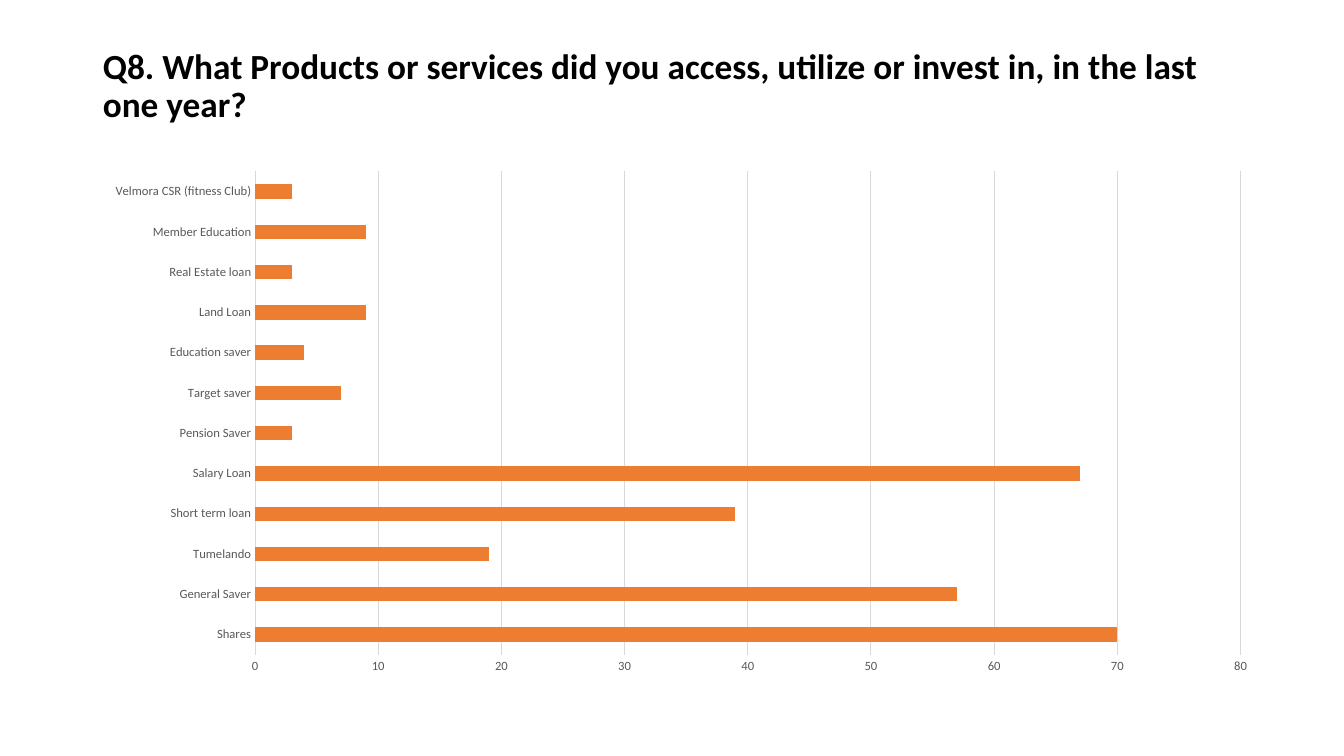
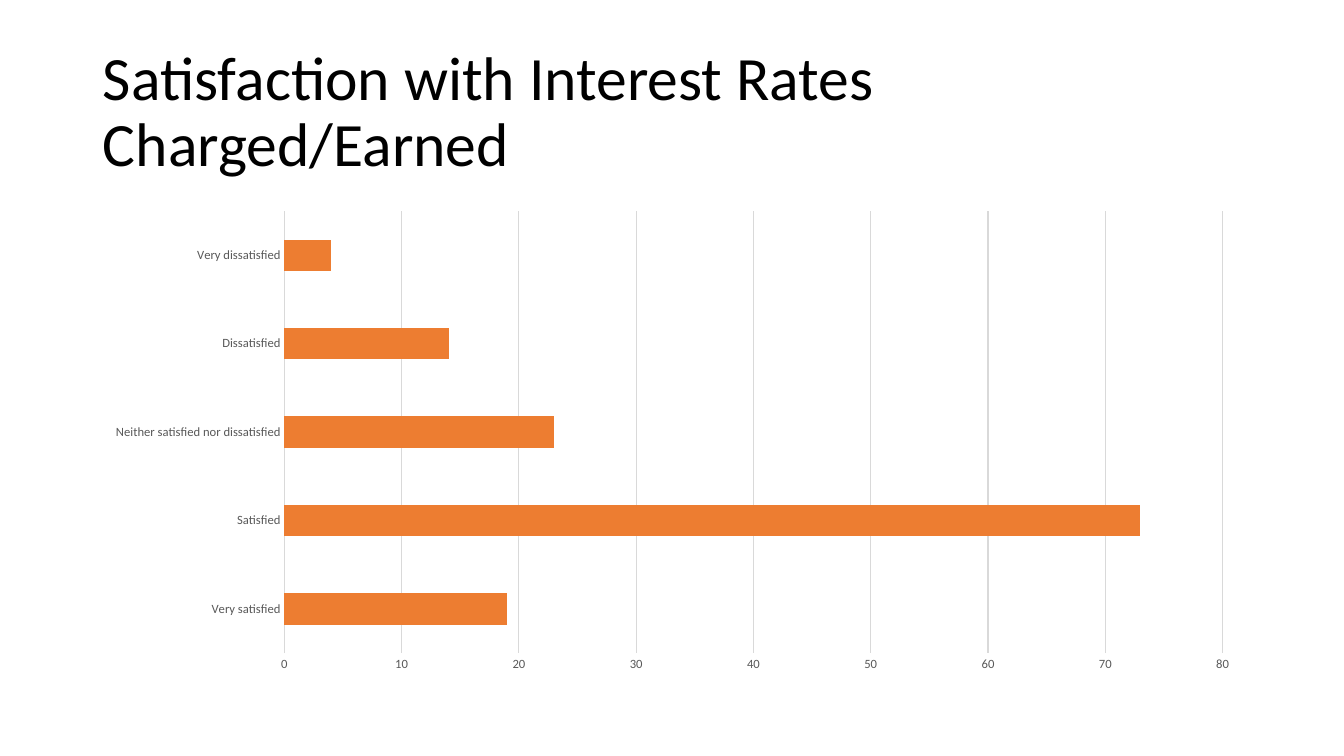
from dataclasses import dataclass
from typing import Any, Optional

from lxml.etree import SubElement
from pptx import Presentation
from pptx.chart.chart import Chart
from pptx.chart.data import CategoryChartData
from pptx.dml.color import RGBColor
from pptx.enum.chart import XL_CHART_TYPE, XL_TICK_MARK
from pptx.enum.text import MSO_ANCHOR, MSO_AUTO_SIZE, PP_ALIGN
from pptx.oxml.ns import qn
from pptx.slide import Slide
from pptx.util import Inches, Pt


@dataclass(frozen=True)
class Theme:
    font: str = "Calibri"
    title: RGBColor = RGBColor(0x00, 0x00, 0x00)
    label: RGBColor = RGBColor(0x59, 0x59, 0x59)
    rule: RGBColor = RGBColor(0xD9, 0xD9, 0xD9)
    bar: RGBColor = RGBColor(0xED, 0x7D, 0x31)
    question_size: float = 25.2
    title_size: float = 44
    label_size: float = 9
    rule_width: float = 0.75


@dataclass(frozen=True)
class SurveySlide:
    title: str
    title_size: float
    bold: bool
    title_height: float
    chart_top: float
    answers: dict[str, int]
    plot: Optional[tuple[float, float, float, float]] = None


THEME = Theme()
LEFT, WIDTH, TITLE_TOP, CHART_BOTTOM = 0.92, 11.5, 0.4, 6.76

SLIDES = [
    SurveySlide(
        "Q8. What Products or services did you access, utilize or invest in, "
        "in the last one year?",
        THEME.question_size, True, 0.92, 1.49,
        {"Shares": 70, "General Saver": 57, "Tumelando": 19,
         "Short term loan": 39, "Salary Loan": 67, "Pension Saver": 3,
         "Target saver": 7, "Education saver": 4, "Land Loan": 9,
         "Real Estate loan": 3, "Member Education": 9,
         "Velmora CSR (fitness Club)": 3},
        plot=(0.14, 0.04, 0.85, 0.91),
    ),
    SurveySlide(
        "Satisfaction with Interest Rates Charged/Earned",
        THEME.title_size, False, 1.45, 2,
        {"Very satisfied": 19, "Satisfied": 73,
         "Neither satisfied nor dissatisfied": 23, "Dissatisfied": 14,
         "Very dissatisfied": 4},
    ),
]


def apply(target: Any, values: dict[str, Any]) -> None:
    for name, value in values.items():
        setattr(target, name, value)


def format_font(font: Any, size: float, color: RGBColor, bold: bool = False) -> None:
    apply(font, {"name": THEME.font, "size": Pt(size), "bold": bold})
    font.color.rgb = color


def format_rule(line: Any) -> None:
    line.color.rgb = THEME.rule
    line.width = Pt(THEME.rule_width)


def add_title(s: Slide, item: SurveySlide) -> None:
    sp = s.shapes.title
    apply(sp, {"left": Inches(LEFT), "top": Inches(TITLE_TOP),
               "width": Inches(WIDTH), "height": Inches(item.title_height)})
    tf = sp.text_frame
    apply(tf, {"word_wrap": True, "auto_size": MSO_AUTO_SIZE.NONE,
               "vertical_anchor": MSO_ANCHOR.MIDDLE})
    p = tf.paragraphs[0]
    apply(p, {"alignment": PP_ALIGN.LEFT, "line_spacing": 0.9})
    r = p.add_run()
    r.text = item.title
    format_font(r.font, item.title_size, THEME.title, item.bold)


def place_plot(chart: Chart, box: tuple[float, float, float, float]) -> None:
    """Fix the inner plot area as fractions of the chart."""
    area = chart._chartSpace.chart.plotArea
    for old in area.findall(qn("c:layout")):
        area.remove(old)
    layout = SubElement(area, qn("c:layout"))
    area.insert(0, layout)
    manual = SubElement(layout, qn("c:manualLayout"))
    settings = {"layoutTarget": "inner", "xMode": "edge", "yMode": "edge",
                **dict(zip("xywh", box))}
    for tag, value in settings.items():
        SubElement(manual, qn(f"c:{tag}")).set("val", str(value))


def add_bar_chart(s: Slide, item: SurveySlide) -> None:
    data = CategoryChartData()
    data.categories = list(item.answers)
    data.add_series("Series 1", list(item.answers.values()))
    chart = s.shapes.add_chart(
        XL_CHART_TYPE.BAR_CLUSTERED, Inches(LEFT), Inches(item.chart_top),
        Inches(WIDTH), Inches(CHART_BOTTOM - item.chart_top), data).chart
    apply(chart, {"has_legend": False, "has_title": False})
    format_font(chart.font, THEME.label_size, THEME.label)

    # Bars
    plot = chart.plots[0]
    apply(plot, {"gap_width": 182, "vary_by_categories": False})
    fill = plot.series[0].format.fill
    fill.solid()
    fill.fore_color.rgb = THEME.bar

    # Axes and gridlines
    categories, values = chart.category_axis, chart.value_axis
    for axis in (categories, values):
        apply(axis, {"major_tick_mark": XL_TICK_MARK.NONE,
                     "minor_tick_mark": XL_TICK_MARK.NONE})
        format_font(axis.tick_labels.font, THEME.label_size, THEME.label)
    apply(values, {"minimum_scale": 0, "maximum_scale": 80, "major_unit": 10,
                   "has_major_gridlines": True})
    format_rule(categories.format.line)
    format_rule(values.major_gridlines.format.line)
    values.format.line.fill.background()

    if item.plot:
        place_plot(chart, item.plot)


def main() -> None:
    prs = Presentation()
    apply(prs, {"slide_width": Inches(13.33), "slide_height": Inches(7.5)})
    title_only = prs.slide_layouts[5]
    for item in SLIDES:
        s = prs.slides.add_slide(title_only)
        add_title(s, item)
        add_bar_chart(s, item)
    prs.save("out.pptx")


if __name__ == "__main__":
    main()
